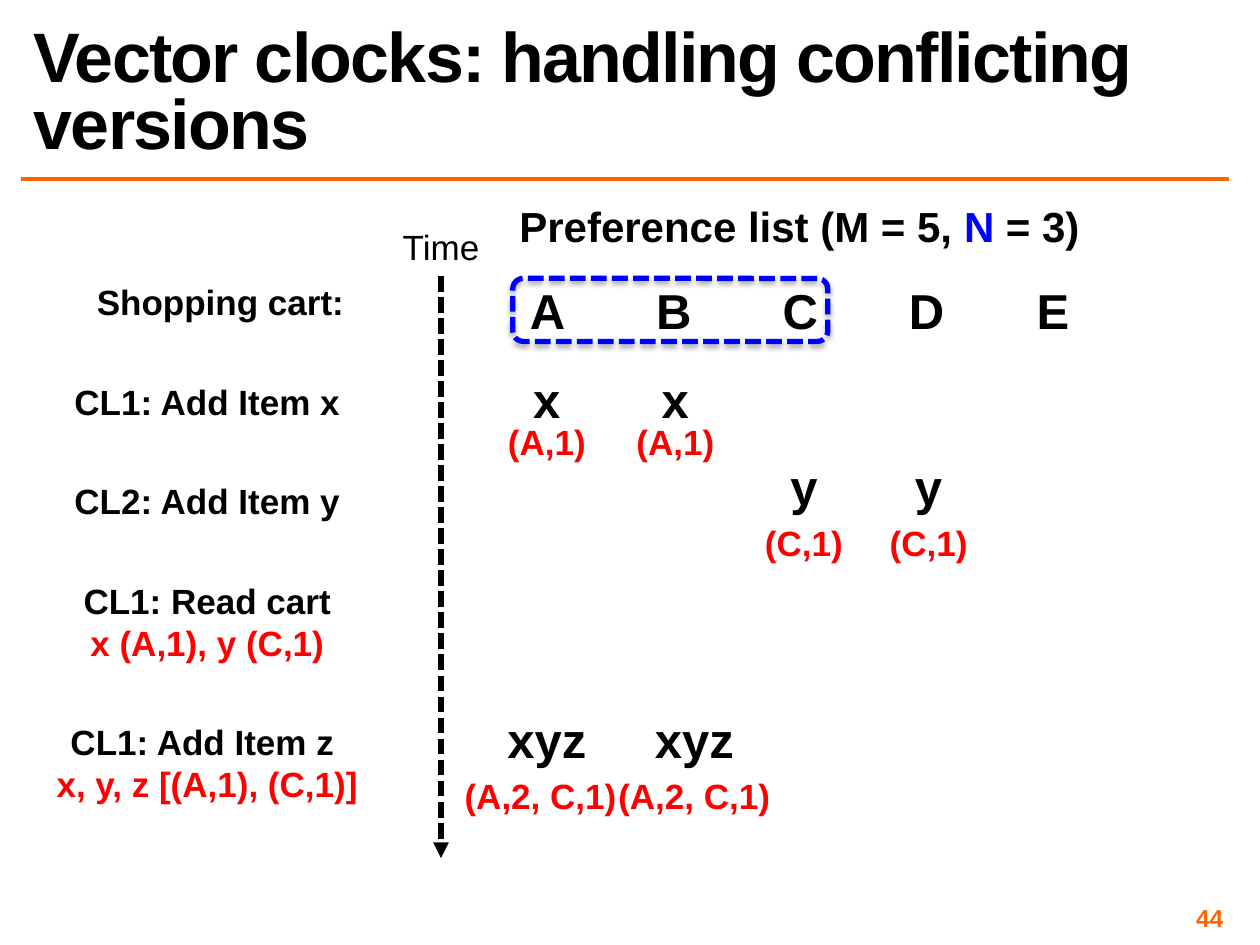
from pptx import Presentation
from pptx import util as u
from pptx.dml.color import RGBColor
from pptx.enum import dml, shapes, text
from pptx.oxml.ns import qn
from lxml import etree

COLORS = {"ink": "000000", "accent": "FF6600", "vector": "FF0000", "quorum": "0000FF"}
COLUMNS, ROWS = 100, 75


class SlideBuilder:
    """Holds the style and the current page; lengths are grid columns and rows."""

    font = "Arial"

    def __init__(self, deck):
        self.page = deck.slides.add_slide(deck.slide_layouts[6])
        self.column = deck.slide_width / COLUMNS
        self.row = deck.slide_height / ROWS

    def place(self, *lengths):
        units = (self.column, self.row) * 2
        return [u.Emu(round(n * unit)) for n, unit in zip(lengths, units)]

    def color(self, name):
        return RGBColor.from_string(COLORS[name])

    def text(self, area, lines, size, bold=True, align="CENTER", anchor="TOP", wrap=False):
        """Each line is a list of (words, color name) pairs."""
        box = self.page.shapes.add_textbox(*self.place(*area))
        frame = box.text_frame
        frame.word_wrap = wrap
        frame.vertical_anchor = text.MSO_ANCHOR[anchor]
        if not wrap:
            frame.auto_size = text.MSO_AUTO_SIZE.SHAPE_TO_FIT_TEXT
        for index, line in enumerate(lines):
            para = frame.add_paragraph() if index else frame.paragraphs[0]
            para.alignment = text.PP_ALIGN[align]
            para.font.name, para.font.size, para.font.bold = self.font, u.Pt(size), bold
            for words, color in line:
                span = para.add_run()
                span.text = words
                span.font.color.rgb = self.color(color)
        return frame

    def label(self, center, top, width, *lines, size=20, bold=True):
        height = len(lines) * size / 6 + 1
        self.text((center - width / 2, top, width, height), lines, size, bold)

    def title(self, area, words):
        frame = self.text(area, [[(words, "ink")]], 40, align="LEFT", anchor="BOTTOM", wrap=True)
        para = frame.paragraphs[0]
        para.line_spacing = 0.8
        para.runs[0].font._element.set("spc", "-100")

    def page_number(self, area, number):
        frame = self.text(area, [[(number, "accent")]], 14, align="RIGHT", anchor="MIDDLE", wrap=True)
        frame.margin_left = frame.margin_right = u.Inches(0.04)
        frame.margin_top = frame.margin_bottom = u.Inches(0.04)

    def stroke(self, line, color, width, dashed):
        line.color.rgb = self.color(color)
        line.width = u.Pt(width)
        if dashed:
            line.dash_style = dml.MSO_LINE.SQUARE_DOT

    def line(self, start, end, color, width, dashed=False, arrow=False):
        link = self.page.shapes.add_connector(
            shapes.MSO_CONNECTOR.STRAIGHT, *self.place(*start, *end))
        self.stroke(link.line, color, width, dashed)
        if arrow:
            etree.SubElement(link.line._get_or_add_ln(), qn("a:tailEnd"), type="triangle")
        etree.SubElement(link._element.spPr, qn("a:effectLst"))

    def dashed_frame(self, area, color, width):
        frame = self.page.shapes.add_shape(
            shapes.MSO_SHAPE.ROUNDED_RECTANGLE, *self.place(*area))
        frame.fill.background()
        self.stroke(frame.line, color, width, dashed=True)
        frame.shadow.inherit = False
        effects = frame._element.spPr.find(qn("a:effectLst"))
        shadow = etree.SubElement(
            effects, qn("a:outerShdw"), blurRad=str(u.Pt(3.1)), dist=str(u.Pt(1.8)),
            dir="5400000", rotWithShape="0")
        tint = etree.SubElement(shadow, qn("a:srgbClr"), val=COLORS["ink"])
        etree.SubElement(tint, qn("a:alpha"), val="35000")


def main():
    deck = Presentation()
    deck.slide_width, deck.slide_height = u.Inches(10), u.Inches(7.5)
    slide = SlideBuilder(deck)

    slide.line((1.7, 14.2), (97.5, 14.2), "accent", 2)
    slide.title((1.7, 1.7, 95.8, 11.7), "Vector clocks: handling conflicting versions")
    slide.page_number((74.2, 71.7, 23.3, 2.3), "44")

    slide.label(35, 17.4, 8.2, [("Time", "ink")], bold=False)
    slide.line((35, 21.9), (35, 68.1), "ink", 3, dashed=True, arrow=True)

    slide.label(63.45, 15.4, 46.9, [("Preference list (M = 5, ", "ink"), ("N", "quorum"),
                                    (" = 3)", "ink")], size=24)
    for index, node in enumerate("ABCDE"):
        slide.label(43.45 + 10.03 * index, 21.8, 4.9, [(node, "ink")], size=28)
    slide.dashed_frame((40.7, 22.1, 25, 5), "quorum", 3)

    # Center, top, width, action, cart contents seen by the client
    steps = [
        (17.5, 21.8, 21.8, "Shopping cart:", None),
        (16.45, 29.7, 23.3, "CL1: Add Item x", None),
        (16.45, 37.6, 23.3, "CL2: Add Item y", None),
        (16.45, 45.5, 21.8, "CL1: Read cart", "x (A,1), y (C,1)"),
        (16.45, 56.7, 26, "CL1: Add Item z ", "x, y, z [(A,1), (C,1)]"),
    ]
    for center, top, width, action, contents in steps:
        lines = [[(action, "ink")]]
        if contents:
            lines.append([(contents, "vector")])
        slide.label(center, top, width, *lines)

    # Value, its top, width and centers; then the same for its clock
    writes = [
        ("x", 28.8, 4.2, (43.4, 53.6), "(A,1)", 32.9, 8.2, (43.4, 53.6)),
        ("y", 35.7, 4.2, (63.8, 73.7), "(C,1)", 40.9, 8.2, (63.8, 73.7)),
        ("xyz", 55.8, 8.4, (43.4, 55.1), "(A,2, C,1)", 61, 14.2, (42.9, 55.1)),
    ]
    for value, top, width, centers, clock, clock_top, clock_width, clock_centers in writes:
        for center in centers:
            slide.label(center, top, width, [(value, "ink")], size=28)
        for center in clock_centers:
            slide.label(center, clock_top, clock_width, [(clock, "vector")])

    deck.save("out.pptx")


if __name__ == "__main__":
    main()
